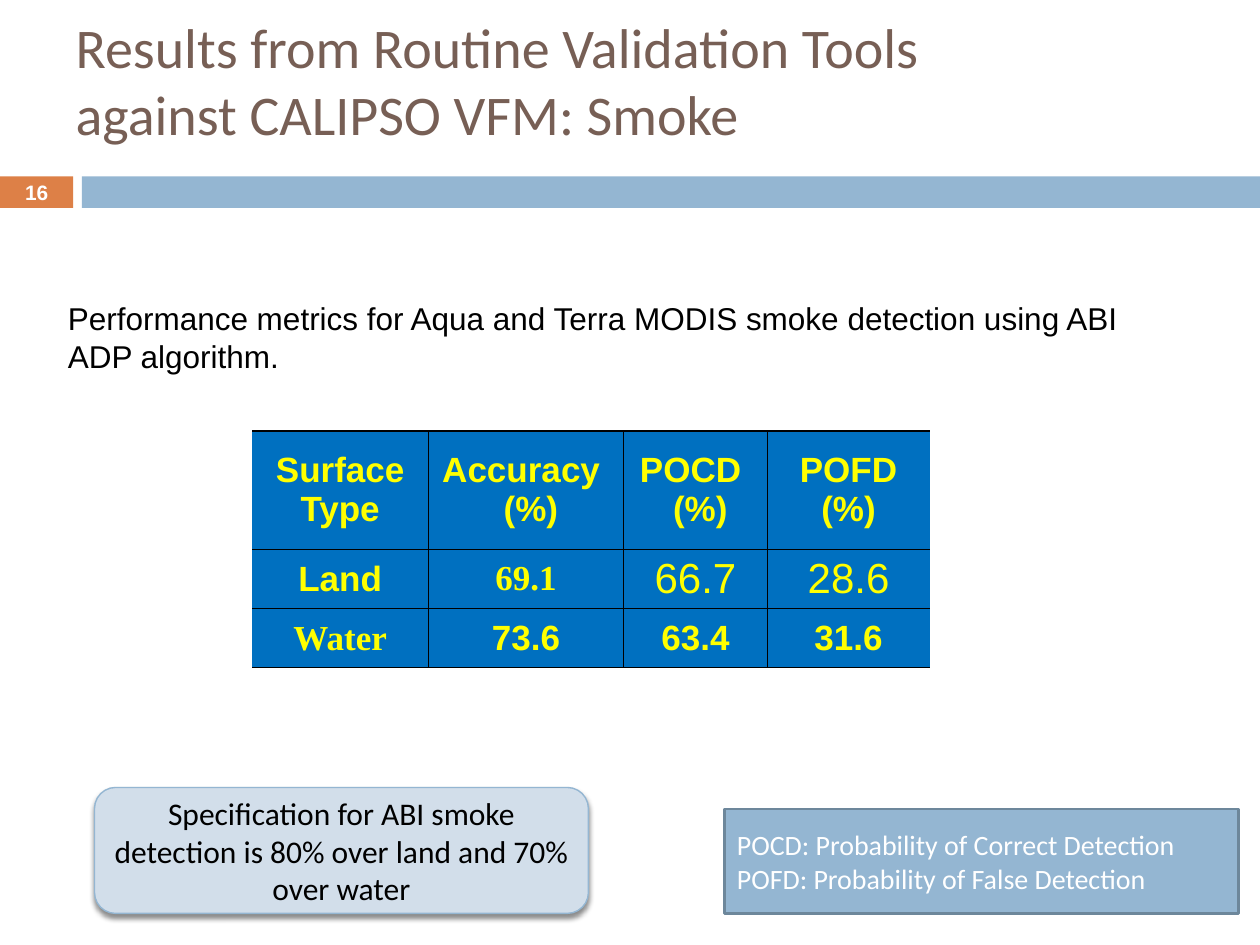
"""Build the smoke detection validation slide with its table of metrics."""
from dataclasses import dataclass

from lxml import etree
from pptx import Presentation
from pptx.dml.color import RGBColor
from pptx.enum.shapes import MSO_SHAPE
from pptx.enum.text import MSO_ANCHOR, PP_ALIGN
from pptx.oxml import parse_xml
from pptx.util import Inches, Pt

RECT, ROUNDED = MSO_SHAPE.RECTANGLE, MSO_SHAPE.ROUNDED_RECTANGLE
LEFT, CENTER = PP_ALIGN.LEFT, PP_ALIGN.CENTER
TOP, MIDDLE = MSO_ANCHOR.TOP, MSO_ANCHOR.MIDDLE
TITLE_ONLY = 5
NS = 'xmlns:a="http://schemas.openxmlformats.org/drawingml/2006/main"'


@dataclass(frozen=True)
class Theme:
    brown: str = "775F55"
    orange: str = "DD8047"
    blue: str = "94B6D2"
    slate: str = "6D879B"
    pale: str = "D2DEEA"
    cell: str = "0070C0"
    yellow: str = "FFFF00"
    white: str = "FFFFFF"
    black: str = "000000"
    heading: str = "Calibri"
    body: str = "Arial"
    serif: str = "Times New Roman"
    title_size: float = 32
    large: float = 24
    table_size: float = 20
    text_size: float = 18
    legend_size: float = 16
    number_size: float = 11.9


def write(frame, lines, font, size, color, bold=False, align=LEFT, anchor=MIDDLE):
    """Fill a text frame with one paragraph per line."""
    frame.word_wrap = True
    frame.vertical_anchor = anchor
    for index, line in enumerate(lines):
        paragraph = frame.paragraphs[0] if index == 0 else frame.add_paragraph()
        paragraph.text = line
        paragraph.alignment = align
        for run in paragraph.runs:
            run.font.name, run.font.size, run.font.bold = font, Pt(size), bold
            run.font.color.rgb = RGBColor.from_string(color)


class Deck:
    """Hold the theme and current slide; lengths are percentages of the slide."""

    def __init__(self, theme):
        self.theme = theme
        self.show = Presentation()
        self.show.slide_width, self.show.slide_height = Inches(10), Inches(7.5)
        self.slide = self.show.slides.add_slide(self.show.slide_layouts[TITLE_ONLY])

    def across(self, share):
        return round(self.show.slide_width * share / 100)

    def down(self, share):
        return round(self.show.slide_height * share / 100)

    def box(self, x, y, w, h):
        return self.across(x), self.down(y), self.across(w), self.down(h)

    def title(self, area, text):
        heading = self.slide.shapes.title
        heading.left, heading.top, heading.width, heading.height = self.box(*area)
        heading.text_frame.margin_top = Inches(0.03)
        write(heading.text_frame, [text], self.theme.heading, self.theme.title_size,
              self.theme.brown, anchor=TOP)

    def text(self, area, lines, **style):
        frame = self.slide.shapes.add_textbox(*self.box(*area)).text_frame
        write(frame, lines, **style)

    def panel(self, area, fill, kind=RECT, line=None, width=1, lines=(), **style):
        panel = self.slide.shapes.add_shape(kind, *self.box(*area))
        panel.shadow.inherit = False
        panel.fill.solid()
        panel.fill.fore_color.rgb = RGBColor.from_string(fill)
        if line:
            panel.line.color.rgb = RGBColor.from_string(line)
            panel.line.width = Pt(width)
        else:
            panel.line.fill.background()
        if lines:
            write(panel.text_frame, lines, **style)
        return panel

    def cast_shadow(self, panel, blur, distance, opacity):
        effects = panel.element.spPr.find("{*}effectLst")
        effects.append(parse_xml(
            f'<a:outerShdw {NS} blurRad="{Pt(blur)}" dist="{Pt(distance)}" dir="5400000" '
            f'rotWithShape="0"><a:srgbClr val="{self.theme.black}">'
            f'<a:alpha val="{opacity * 1000}"/></a:srgbClr></a:outerShdw>'))

    def rule_cell(self, cell, hidden):
        properties = cell._tc.get_or_add_tcPr()
        for side in "LRTB":
            border = etree.SubElement(properties, properties.tag.replace("tcPr", f"ln{side}"),
                                      w=str(Pt(1)))
            paint = (f"<a:noFill {NS}/>" if side in hidden else
                     f'<a:solidFill {NS}><a:srgbClr val="{self.theme.black}"/></a:solidFill>')
            border.append(parse_xml(paint))

    def table(self, x, y, widths, heights, rows, special):
        area = self.box(x, y, sum(widths), sum(heights))
        table = self.slide.shapes.add_table(len(rows), len(widths), *area).table
        for column, width in zip(table.columns, widths):
            column.width = self.across(width)
        for row, height in zip(table.rows, heights):
            row.height = self.down(height)
        base = dict(font=self.theme.body, size=self.theme.table_size,
                    color=self.theme.yellow, bold=True, align=CENTER)
        for r, row in enumerate(rows):
            for c, value in enumerate(row):
                cell = table.cell(r, c)
                cell.margin_left = cell.margin_right = Inches(0.07)
                cell.margin_top = cell.margin_bottom = 0
                cell.vertical_anchor = MIDDLE
                hidden = "L" * (c == 0) + "R" * (c == len(widths) - 1)
                self.rule_cell(cell, hidden)
                cell.fill.solid()
                cell.fill.fore_color.rgb = RGBColor.from_string(self.theme.cell)
                write(cell.text_frame, value.split("\n"), **{**base, **special.get(value, {})})


def main():
    theme = Theme()
    deck = Deck(theme)
    band_top, band_height, number_width = 18.67, 3.33, 5.8

    deck.panel((0, band_top, number_width, band_height), theme.orange)
    deck.panel((6.5, band_top, 93.5, band_height), theme.blue)
    deck.title((5, 0.93, 85.8, 10),
               "Results from Routine Validation Tools\vagainst CALIPSO VFM: Smoke")
    deck.text((0, 18.53, number_width, 3.6), ["16"], font=theme.body,
              size=theme.number_size, color=theme.white, bold=True, align=CENTER)

    serif = dict(font=theme.serif)
    plain = dict(size=theme.large, bold=False)
    metrics = [
        ["Surface\nType", "Accuracy \n (%)", "POCD \n (%)", "POFD\n(%)"],
        ["Land", "69.1", "66.7", "28.6"],
        ["Water", "73.6", "63.4", "31.6"],
    ]
    deck.table(20, 45.6, [14, 15.5, 11.4, 12.9], [12.53, 6.27, 6.27], metrics,
               {"69.1": serif, "Water": serif, "66.7": plain, "28.6": plain})

    deck.text((4.4, 30.93, 89, 9.47),
              ["Performance metrics for Aqua and Terra MODIS smoke detection "
               "using ABI ADP algorithm."],
              font=theme.body, size=theme.text_size, color=theme.black)
    deck.panel((57.5, 85.6, 40.8, 11.07), theme.blue, line=theme.slate, width=1.5,
               lines=["POCD: Probability of Correct Detection",
                      "POFD: Probability of False Detection"],
               font=theme.heading, size=theme.legend_size, color=theme.white)
    specification = deck.panel(
        (7.5, 83.33, 39.2, 13.33), theme.pale, kind=ROUNDED, line=theme.blue, width=0.79,
        lines=["Specification for ABI smoke detection is 80% over land and 70% over water"],
        font=theme.heading, size=theme.text_size, color=theme.black, align=CENTER)
    deck.cast_shadow(specification, blur=3, distance=2.4, opacity=45)

    deck.show.save("out.pptx")


if __name__ == "__main__":
    main()
